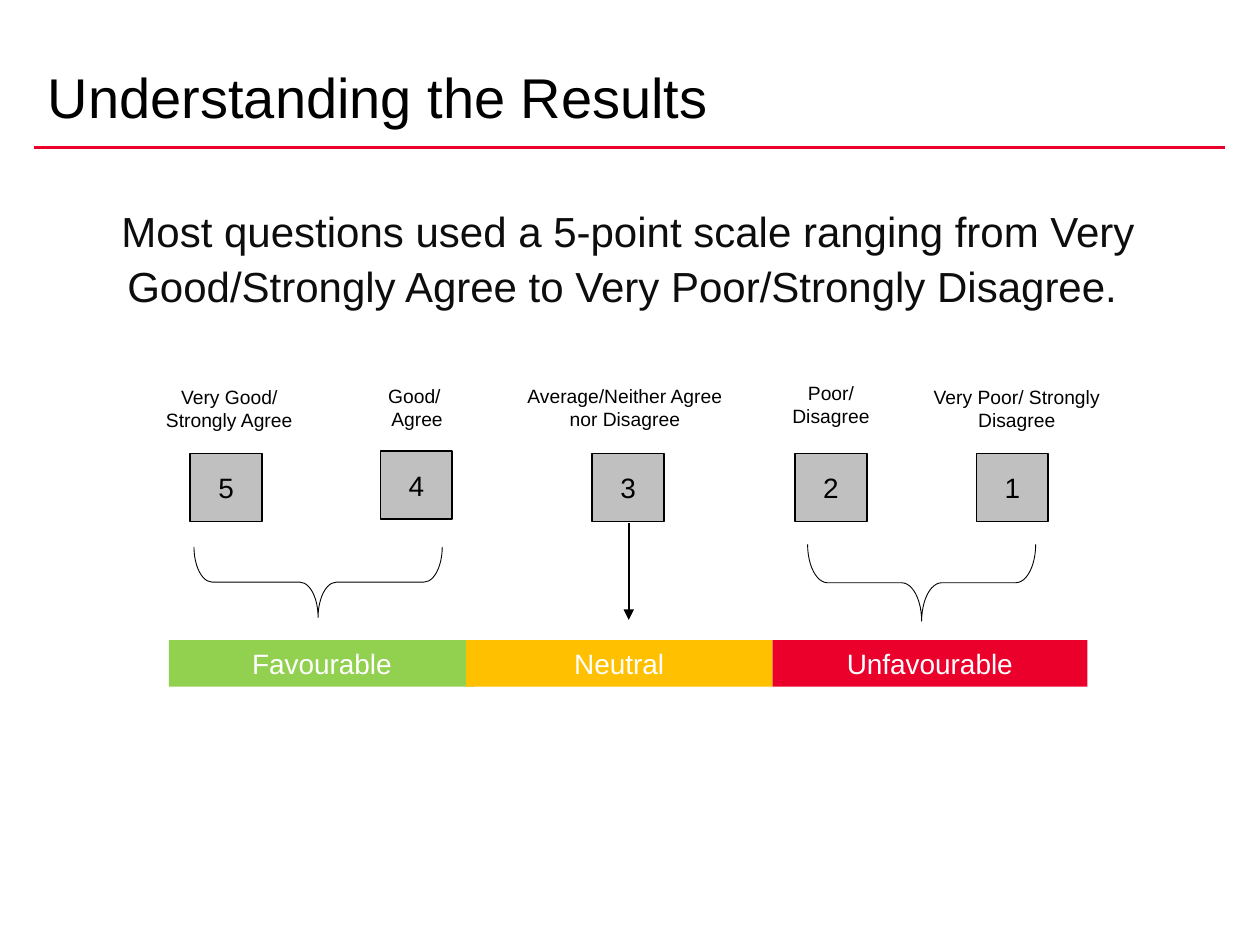
from typing import NamedTuple

from pptx import Presentation
from pptx.dml import color
from pptx.enum import shapes, text
from pptx.oxml import parse_xml
from pptx.oxml.ns import nsdecls, qn
from pptx.util import Emu, Inches, Pt

# The slide is a grid of 100 columns by 75 rows
COLS, ROWS = 100, 75
BLACK, WHITE, GREY, RED = "000000", "FFFFFF", "C0C0C0", "EA002A"
KIND = shapes.MSO_SHAPE
MID, TOP, LOW = (text.MSO_ANCHOR.MIDDLE, text.MSO_ANCHOR.TOP,
                 text.MSO_ANCHOR.BOTTOM)
LEFT, CENTRE = text.PP_ALIGN.LEFT, text.PP_ALIGN.CENTER

deck = Presentation()
deck.slide_width, deck.slide_height = Inches(10), Inches(7.5)
slide = deck.slides.add_slide(deck.slide_layouts[5])


class Area(NamedTuple):
    col: float
    row: float
    wide: float
    high: float


class Score(NamedTuple):
    mark: str
    box: Area
    label: str
    note: Area


class Band(NamedTuple):
    name: str
    fill: str
    area: Area


class Brace(NamedTuple):
    mid: float
    row: float
    wide: float
    high: float


def hue(code: str) -> color.RGBColor:
    return color.RGBColor.from_string(code)


def x(col: float) -> Emu:
    return Emu(round(deck.slide_width * col / COLS))


def y(row: float) -> Emu:
    return Emu(round(deck.slide_height * row / ROWS))


def span(area: Area) -> tuple:
    return x(area.col), y(area.row), x(area.wide), y(area.high)


def write(shape, words: str, size: float, ink: str = BLACK, align=CENTRE,
          anchor=TOP, wrap: bool = True, space: float = 1.0,
          pad: tuple = (0.1, 0.05)) -> None:
    frame = shape.text_frame
    frame.text = words
    frame.word_wrap, frame.vertical_anchor = wrap, anchor
    frame.auto_size = text.MSO_AUTO_SIZE.NONE
    frame.margin_left = frame.margin_right = Inches(pad[0])
    frame.margin_top = frame.margin_bottom = Inches(pad[1])
    for para in frame.paragraphs:
        para.alignment, para.line_spacing = align, space
        para.font.name, para.font.size = "Arial", Pt(size)
        para.font.color.rgb = hue(ink)


def draw(kind, area: Area, fill: str = "", line: str = "", width: float = 1):
    shape = slide.shapes.add_shape(kind, *span(area))
    shape.shadow.inherit = False
    if fill:
        shape.fill.solid()
        shape.fill.fore_color.rgb = hue(fill)
    else:
        shape.fill.background()
    if line:
        shape.line.color.rgb = hue(line)
        shape.line.width = Pt(width)
    else:
        shape.line.fill.background()
    return shape


def note(area: Area, words: str, size: float, **style) -> None:
    write(slide.shapes.add_textbox(*span(area)), words, size, **style)


def rule(start: tuple, end: tuple, ink: str, width: float,
         arrow: bool = False) -> None:
    line = slide.shapes.add_connector(
        shapes.MSO_CONNECTOR.STRAIGHT,
        x(start[0]), y(start[1]), x(end[0]), y(end[1]))
    line.line.color.rgb = hue(ink)
    line.line.width = Pt(width)
    if arrow:
        line.line._get_or_add_ln().append(
            parse_xml(f'<a:tailEnd {nsdecls("a")} type="triangle"/>'))
    line._element.find(qn("p:spPr")).append(
        parse_xml(f'<a:effectLst {nsdecls("a")}/>'))


def gather(brace: Brace) -> None:
    # A left brace turned so that its point faces down
    area = Area(brace.mid - brace.high / 2,
                brace.row + (brace.high - brace.wide) / 2,
                brace.high, brace.wide)
    shape = draw(KIND.LEFT_BRACE, area, line=BLACK, width=0.5)
    shape.rotation = 270
    shape.adjustments[0], shape.adjustments[1] = 0.26, 0.5


def box(col: float, row: float = 36) -> Area:
    return Area(col, row, 5.7, 5.4)


def tag(col: float, row: float, wide: float) -> Area:
    return Area(col, row, wide, 4.7)


SCORES = [
    Score("5", box(15.1), "Very Good/\nStrongly Agree", tag(11.6, 30.1, 13.2)),
    Score("4", box(30.2, 35.8), "Good/ \nAgree", tag(27.7, 30, 10.8)),
    Score("3", box(47), "Average/Neither Agree nor Disagree",
          tag(40.6, 30, 18)),
    Score("2", box(63.1), "Poor/ Disagree", tag(60.4, 29.8, 11.1)),
    Score("1", box(77.5), "Very Poor/ Strongly Disagree",
          tag(72.9, 30.1, 15.6)),
]
BANDS = [
    Band("Favourable", "92D050", Area(13.4, 50.8, 24.3, 3.7)),
    Band("Unfavourable", RED, Area(61.3, 50.8, 25, 3.7)),
    Band("Neutral", "FFC000", Area(37, 50.8, 24.3, 3.7)),
]
BRACES = [Brace(25.25, 43.4, 19.7, 5.6), Brace(73.15, 43.2, 18.1, 6.1)]

# Heading
rule((2.7, 11.7), (97.2, 11.7), RED, 2)
title = slide.shapes.title
title.left, title.top, title.width, title.height = span(
    Area(2.8, 0.5, 90, 10.3))
write(title, "Understanding the Results", 32, align=LEFT, anchor=LOW,
      space=0.8)

# Scale: numbered boxes under their labels
rule((49.9, 41.5), (49.9, 49.2), BLACK, 1, arrow=True)
for score in SCORES:
    write(draw(KIND.RECTANGLE, score.box, GREY, BLACK), score.mark, 16,
          anchor=MID, wrap=False)
    note(score.note, score.label, 11)

# Result bands and the braces that lead to them
for band in BANDS:
    write(draw(KIND.RECTANGLE, band.area, band.fill), band.name, 16,
          ink=WHITE, anchor=MID)
for brace in BRACES:
    gather(brace)

# Introduction
note(Area(5.8, 15.3, 88.1, 12.8),
     "Most questions used a 5-point scale ranging from Very Good/Strongly "
     "Agree to Very Poor/Strongly Disagree. ",
     24, ink="0D0D0D", space=1.1, pad=(0.11, 0.06))

deck.save("out.pptx")
